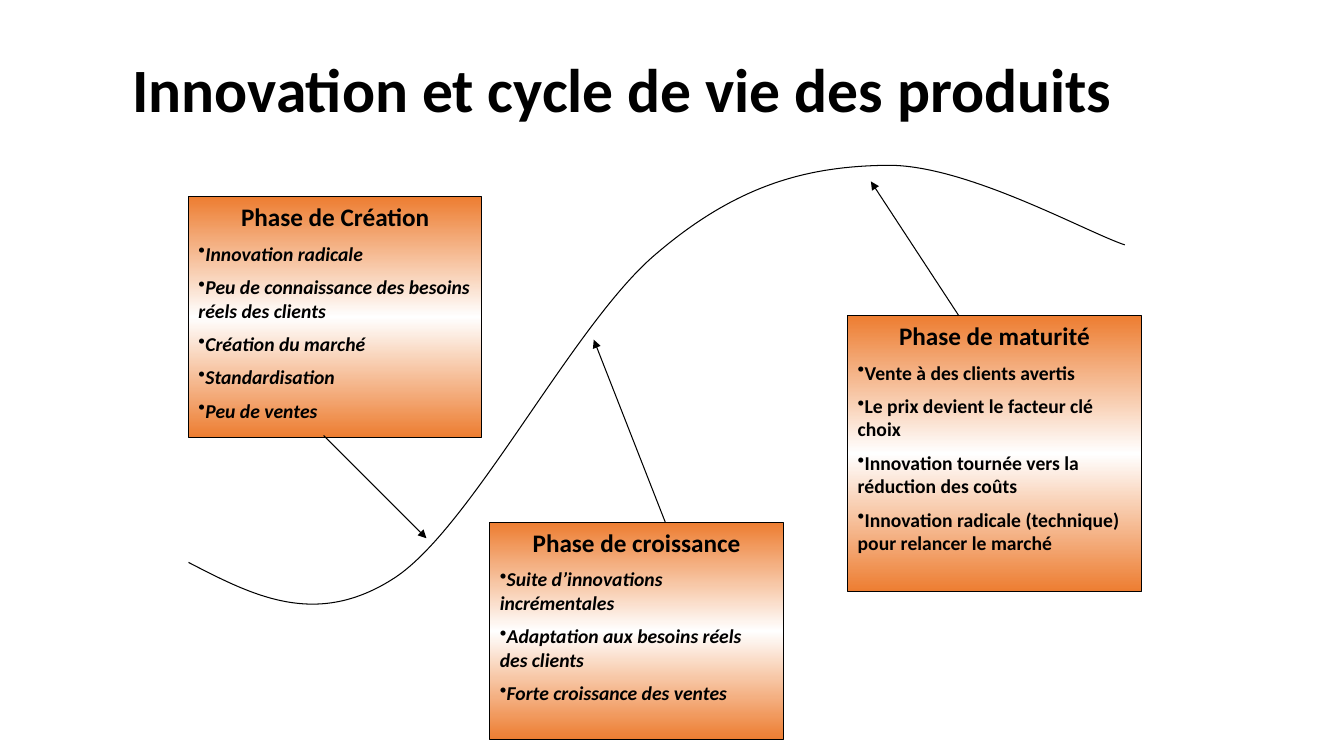
import copy

import pptx
import pptx.dml.color
import pptx.enum.shapes
import pptx.enum.text
import pptx.oxml
import pptx.oxml.ns
import pptx.util

BLACK = pptx.dml.color.RGBColor(0x00, 0x00, 0x00)
WHITE = pptx.dml.color.RGBColor(0xFF, 0xFF, 0xFF)
ORANGE = pptx.dml.color.RGBColor(0xED, 0x7D, 0x31)
FONT = "Calibri"
SLIDE_WIDTH = pptx.util.Inches(13.333)
SLIDE_HEIGHT = pptx.util.Inches(7.5)

# Places and sizes are percentages of the slide's width and height.
BOX_WIDTH = 21.83
PHASES = [
    ((14.03, 26), 31.87, "Phase de Création", True, [
        "Innovation radicale",
        "Peu de connaissance des besoins réels des clients",
        "Création du marché",
        "Standardisation",
        "Peu de ventes",
    ]),
    ((36.45, 69.07), 28.8, "Phase de croissance", True, [
        "Suite d’innovations incrémentales",
        "Adaptation aux besoins réels des clients",
        "Forte croissance des ventes",
    ]),
    ((63.08, 41.73), 36.53, "Phase de maturité", False, [
        "Vente à des clients avertis",
        "Le prix devient le facteur clé choix",
        "Innovation tournée vers la réduction des coûts",
        "Innovation radicale (technique) pour relancer le marché",
    ]),
]
# The start, then two control points and an end for each Bézier segment.
LIFE_CYCLE = [
    (14.03, 74.4),
    (18.83, 78.8), (23.55, 83.2), (29.4, 76.4),
    (35.18, 69.6), (42.75, 42.53), (48.9, 33.47),
    (54.98, 24.27), (60.23, 22), (66, 21.87),
    (71.85, 21.73), (80.78, 30.67), (83.7, 32.4),
]
ARROWS = [
    ((24.08, 57.6), (31.73, 71.2)),
    ((49.5, 69.07), (44.18, 44.93)),
    ((71.33, 41.73), (64.8, 24)),
]


def share(x, y):
    """Turn percentages of the slide into lengths."""
    return round(SLIDE_WIDTH * x / 100), round(SLIDE_HEIGHT * y / 100)


def add_xml(parent, tag, **attributes):
    child = parent.makeelement(pptx.oxml.ns.qn(tag), attributes)
    parent.append(child)
    return child


def format_line(line):
    line.color.rgb = BLACK
    line.width = pptx.util.Pt(0.75)


def format_font(paragraph, size, italic=False):
    for run in paragraph.runs:
        run.font.name = FONT
        run.font.size = pptx.util.Pt(size)
        run.font.bold = True
        run.font.italic = italic
        run.font.color.rgb = BLACK


def set_title(slide, text):
    title = slide.shapes.title
    title.left, title.top = share(3.22, 2.53)
    title.width, title.height = share(86.25, 19.33)
    title.text_frame.text = text
    title.text_frame.vertical_anchor = pptx.enum.text.MSO_ANCHOR.MIDDLE
    paragraph = title.text_frame.paragraphs[0]
    paragraph.alignment = pptx.enum.text.PP_ALIGN.CENTER
    paragraph.line_spacing = 0.9
    format_font(paragraph, 44)


def fill_with_gradient(shape):
    """Fade from orange to white and back, top to bottom."""
    shape.fill.gradient()
    shape.fill.gradient_angle = 90
    stop_list = next(shape.element.iter(pptx.oxml.ns.qn("a:gsLst")))
    stop_list.append(copy.deepcopy(stop_list[0]))
    colors = (ORANGE, WHITE, ORANGE)
    for index, stop in enumerate(shape.fill.gradient_stops):
        stop.position = index / 2
        stop.color.rgb = colors[index]


def add_phase(slide, corner, height, heading, italic, points):
    box = slide.shapes.add_shape(
        pptx.enum.shapes.MSO_SHAPE.RECTANGLE, *share(*corner), *share(BOX_WIDTH, height))
    box.shadow.inherit = False
    fill_with_gradient(box)
    format_line(box.line)
    frame = box.text_frame
    frame.text = "\n".join([heading, *points])
    frame.word_wrap = True
    frame.auto_size = pptx.enum.text.MSO_AUTO_SIZE.SHAPE_TO_FIT_TEXT
    frame.vertical_anchor = pptx.enum.text.MSO_ANCHOR.TOP
    for index, paragraph in enumerate(frame.paragraphs):
        is_point = index > 0
        alignment = pptx.enum.text.PP_ALIGN
        paragraph.alignment = alignment.LEFT if is_point else alignment.CENTER
        format_font(paragraph, 14 if is_point else 18, is_point and italic)
        properties = paragraph._p.get_or_add_pPr()
        add_xml(add_xml(properties, "a:spcBef"), "a:spcPct", val="50000")
        if is_point:
            add_xml(properties, "a:buChar", char="•")


def add_curve(slide, points):
    """Draw the points as cubic Bézier segments."""
    start, *others = [share(*point) for point in points]
    builder = slide.shapes.build_freeform(*start)
    builder.add_line_segments(others, close=False)
    curve = builder.convert_to_shape()
    curve.shadow.inherit = False
    curve.fill.background()
    format_line(curve.line)
    outline = next(curve.element.iter(pptx.oxml.ns.qn("a:path")))
    lines = outline.findall(pptx.oxml.ns.qn("a:lnTo"))
    for first in range(0, len(lines), 3):
        segment = add_xml(outline, "a:cubicBezTo")
        for line in lines[first:first + 3]:
            segment.append(line[0])
            outline.remove(line)


def add_arrow(slide, start, end):
    arrow = slide.shapes.add_connector(
        pptx.enum.shapes.MSO_CONNECTOR.STRAIGHT, *share(*start), *share(*end))
    format_line(arrow.line)
    add_xml(arrow.line._get_or_add_ln(), "a:tailEnd", type="triangle")
    add_xml(arrow.element.spPr, "a:effectLst")


def main():
    presentation = pptx.Presentation()
    presentation.slide_width = SLIDE_WIDTH
    presentation.slide_height = SLIDE_HEIGHT
    slide = presentation.slides.add_slide(presentation.slide_layouts[5])
    set_title(slide, "Innovation et cycle de vie des produits")
    for phase in PHASES:
        add_phase(slide, *phase)
    add_curve(slide, LIFE_CYCLE)
    for start, end in ARROWS:
        add_arrow(slide, start, end)
    presentation.save("out.pptx")


if __name__ == "__main__":
    main()
